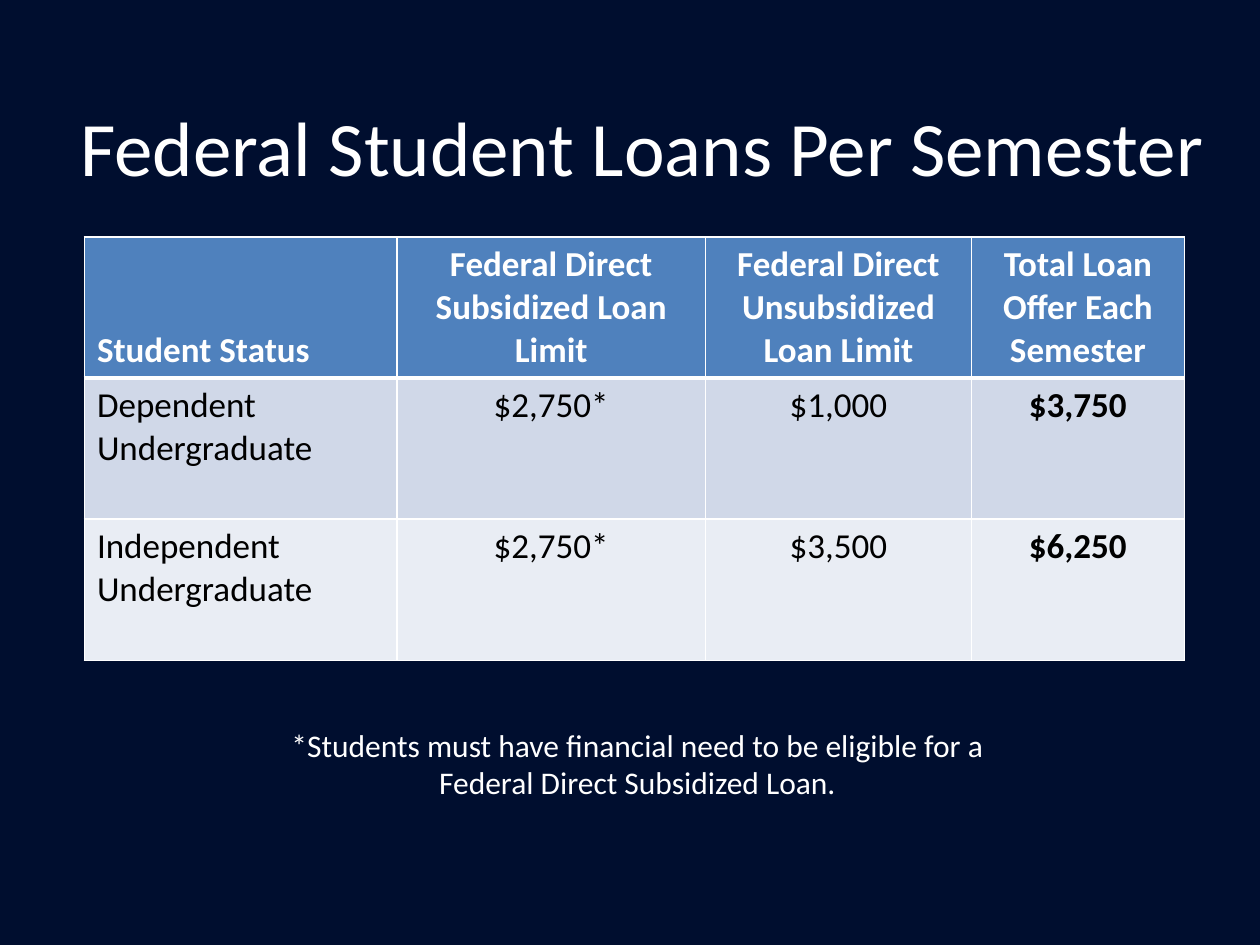
import pptx
import pptx.dml.color
import pptx.enum.text
import pptx.oxml
import pptx.oxml.ns
import pptx.util

FONT = "Calibri"
WHITE, BLACK, NAVY = "FFFFFF", "000000", "000E2F"
HEADER_FILL = "4F81BD"
BAND_FILLS = ["D0D8E8", "E9EDF4"]
ALIGN = pptx.enum.text.PP_ALIGN
ANCHOR = pptx.enum.text.MSO_ANCHOR

COLUMN_WIDTHS = [2.48, 2.45, 2.11, 1.69]
ROW_HEIGHT = 1.12
LOAN_ROWS = [
    ["Student Status", "Federal Direct Subsidized Loan Limit",
     "Federal Direct Unsubsidized Loan Limit", "Total Loan Offer Each Semester"],
    ["Dependent Undergraduate", "$2,750*", "$1,000", "$3,750"],
    ["Independent Undergraduate", "$2,750*", "$3,500", "$6,250"],
]
FOOTNOTE = ("*Students must have financial need to be eligible for a\n"
            "Federal Direct Subsidized Loan.")


def inches(*lengths):
    return [pptx.util.Inches(length) for length in lengths]


def paint(fill, color):
    fill.solid()
    fill.fore_color.rgb = pptx.dml.color.RGBColor.from_string(color)


def write(frame, text, size, color, align=ALIGN.CENTER, bold=False):
    frame.text = text
    frame.word_wrap = True
    for para in frame.paragraphs:
        para.alignment = align
        for span in para.runs:
            span.font.name = FONT
            span.font.size = pptx.util.Pt(size)
            span.font.bold = bold
            span.font.color.rgb = pptx.dml.color.RGBColor.from_string(color)


def add_borders(cell, top, bottom):
    """Draw white cell edges; must run before the cell is filled."""
    properties = cell._tc.get_or_add_tcPr()
    for side, width in {"L": 1, "R": 1, "T": top, "B": bottom}.items():
        properties.append(pptx.oxml.parse_xml(
            f'<a:ln{side} {pptx.oxml.ns.nsdecls("a")} w="{pptx.util.Pt(width)}">'
            f'<a:solidFill><a:srgbClr val="{WHITE}"/></a:solidFill></a:ln{side}>'))


def set_title(page, text):
    title = page.shapes.title
    title.left, title.top, title.width, title.height = inches(0.35, 0.53, 9.5, 1.25)
    write(title.text_frame, text, 44, WHITE)
    title.text_frame.vertical_anchor = ANCHOR.MIDDLE


def add_loan_table(page):
    place = inches(0.67, 1.88, sum(COLUMN_WIDTHS), ROW_HEIGHT * len(LOAN_ROWS))
    table = page.shapes.add_table(len(LOAN_ROWS), len(COLUMN_WIDTHS), *place).table
    for column, width in zip(table.columns, COLUMN_WIDTHS):
        column.width = pptx.util.Inches(width)
    for row_index, texts in enumerate(LOAN_ROWS):
        table.rows[row_index].height = pptx.util.Inches(ROW_HEIGHT)
        header = row_index == 0
        for column_index, text in enumerate(texts):
            cell = table.cell(row_index, column_index)
            total = column_index == len(texts) - 1
            write(cell.text_frame, text, 20, WHITE if header else BLACK,
                  ALIGN.CENTER if column_index else ALIGN.LEFT, header or total)
            cell.vertical_anchor = ANCHOR.BOTTOM if header else ANCHOR.TOP
            add_borders(cell, top=3 if row_index == 1 else 1, bottom=3 if header else 1)
            paint(cell.fill, HEADER_FILL if header else BAND_FILLS[row_index - 1])


def add_footnote(page):
    box = page.shapes.add_textbox(*inches(0.75, 5.71, 8.62, 0.71))
    write(box.text_frame, FOOTNOTE, 18, WHITE)


def main():
    deck = pptx.Presentation()
    deck.slide_width, deck.slide_height = inches(10, 7.5)
    page = deck.slides.add_slide(deck.slide_layouts.get_by_name("Title Only"))
    paint(page.background.fill, NAVY)
    set_title(page, "Federal Student Loans Per Semester")
    add_loan_table(page)
    add_footnote(page)
    deck.save("out.pptx")


if __name__ == "__main__":
    main()
